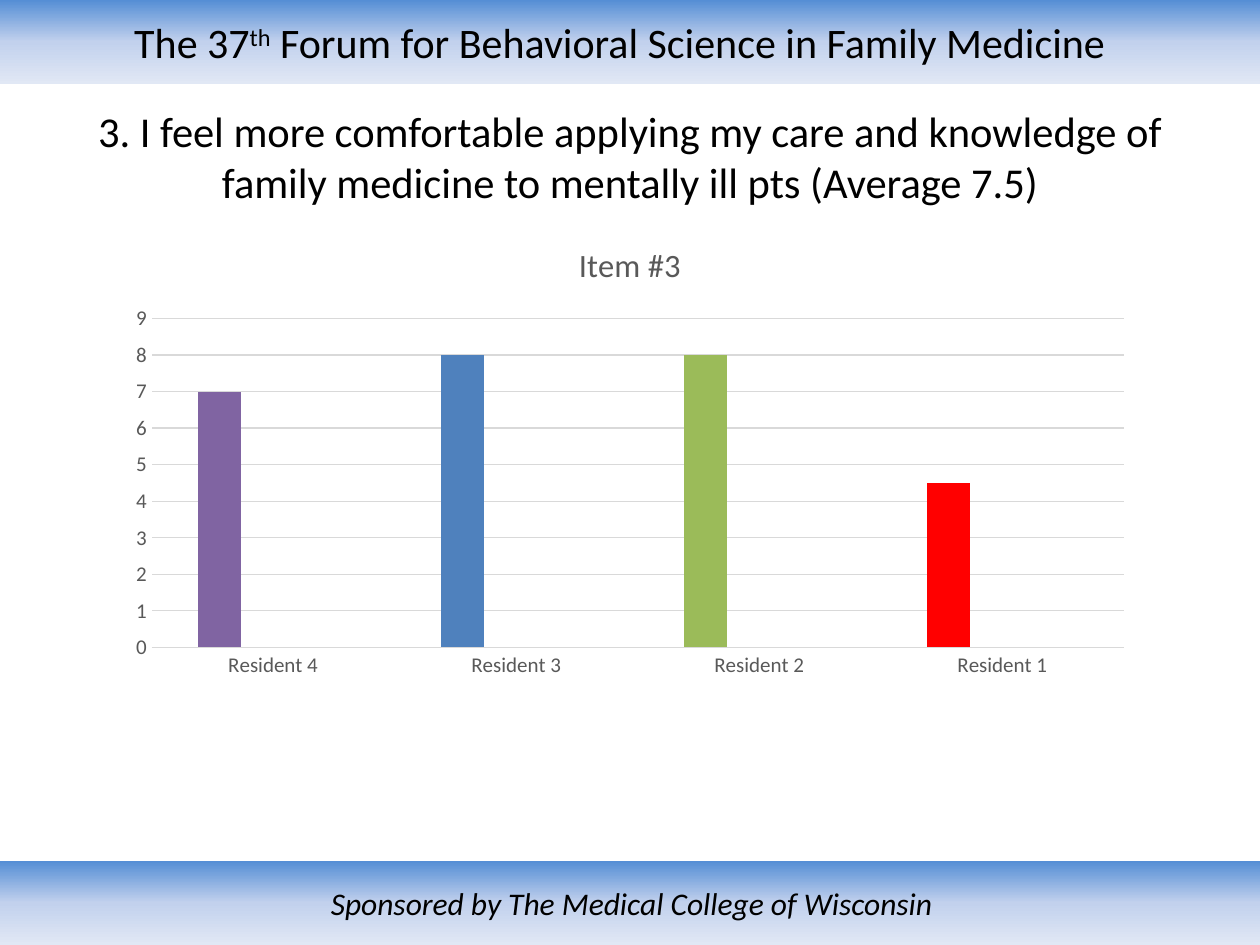
from copy import deepcopy

from pptx import Presentation
from pptx.chart.data import CategoryChartData
from pptx.dml.color import RGBColor
from pptx.enum.chart import XL_CHART_TYPE, XL_TICK_MARK
from pptx.enum.shapes import MSO_SHAPE
from pptx.enum.text import MSO_ANCHOR, PP_ALIGN
from pptx.util import Pt

COLUMNS = XL_CHART_TYPE.COLUMN_CLUSTERED
NO_TICK = XL_TICK_MARK.NONE
RECTANGLE = MSO_SHAPE.RECTANGLE
MIDDLE, TOP = MSO_ANCHOR.MIDDLE, MSO_ANCHOR.TOP
CENTER = PP_ALIGN.CENTER

FONT = "Calibri"
BLACK, GREY, GRID = "000000", "595959", "D9D9D9"
BAND_STOPS = [(0, "558ED5"), (0.5, "C2D1ED"), (1, "E1E8F5")]
RESIDENTS = ["Resident 4", "Resident 3", "Resident 2", "Resident 1"]
SCORES = [7, 8, 8, 4.5]
BAR_COLORS = ["8064A2", "4F81BD", "9BBB59", "FF0000"]


def color(hex_value):
    return RGBColor.from_string(hex_value)


def apply(target, **values):
    for name, value in values.items():
        setattr(target, name, value)


def style_font(font, size, hex_value=BLACK, **values):
    apply(font, name=FONT, size=Pt(size), **values)
    font.color.rgb = color(hex_value)


def write_text(shape, runs, size, italic=False, **frame_format):
    """Write (text, baseline) runs as one centred paragraph."""
    frame = shape.text_frame
    apply(frame, word_wrap=True, **frame_format)
    paragraph = frame.paragraphs[0]
    paragraph.alignment = CENTER
    for text, baseline in runs:
        run = paragraph.add_run()
        run.text = text
        style_font(run.font, size, italic=italic)
        if baseline:
            run.font._element.set("baseline", str(baseline * 1000))


def add_band(slide, box, runs, size, **text_format):
    shape = slide.shapes.add_shape(RECTANGLE, *map(Pt, box))
    shape.shadow.inherit = False
    shape.line.fill.background()
    # Three-stop gradient running downwards
    shape.fill.gradient()
    shape.fill.gradient_angle = 270
    stop_list = shape.element.xpath("./p:spPr/a:gradFill/a:gsLst")[0]
    stop_list.append(deepcopy(stop_list[-1]))
    for stop, (position, hex_value) in zip(shape.fill.gradient_stops, BAND_STOPS):
        stop.position = position
        stop.color.rgb = color(hex_value)
    write_text(shape, runs, size, vertical_anchor=MIDDLE, **text_format)


def add_question(slide, box, text):
    shape = slide.shapes.add_textbox(*map(Pt, box))
    write_text(shape, [(text, 0)], 24.3, vertical_anchor=TOP, margin_top=0)


def add_score_chart(slide, box, title):
    data = CategoryChartData()
    data.categories = RESIDENTS
    data.add_series("Series 1", SCORES)
    # Empty series keep their share of each cluster
    for name in ("Series 2", "Series 3"):
        data.add_series(name, [None] * len(RESIDENTS))
    chart = slide.shapes.add_chart(COLUMNS, *map(Pt, box), data).chart
    style_font(chart.font, 10)
    apply(chart, has_legend=False, has_title=True)

    # Title
    frame = chart.chart_title.text_frame
    frame.text = title
    style_font(frame.paragraphs[0].runs[0].font, 18.6, GREY, bold=False)

    # Bars
    plot = chart.plots[0]
    apply(plot, gap_width=219, overlap=-27, vary_by_categories=False)
    for series, hex_value in zip(plot.series, ("4F81BD", "C0504D", "9BBB59")):
        series.format.fill.solid()
        series.format.fill.fore_color.rgb = color(hex_value)
    for index, hex_value in enumerate(BAR_COLORS):
        fill = plot.series[0].points[index].format.fill
        fill.solid()
        fill.fore_color.rgb = color(hex_value)

    # Axes
    category_axis, value_axis = chart.category_axis, chart.value_axis
    for axis in (category_axis, value_axis):
        apply(axis, major_tick_mark=NO_TICK, minor_tick_mark=NO_TICK)
        style_font(axis.tick_labels.font, 12, GREY)
    apply(value_axis, minimum_scale=0, maximum_scale=9, major_unit=1,
          has_major_gridlines=True)
    value_axis.format.line.fill.background()
    for line in (category_axis.format.line, value_axis.major_gridlines.format.line):
        line.width = Pt(0.75)
        line.color.rgb = color(GRID)


def main():
    presentation = Presentation()
    apply(presentation, slide_width=Pt(720), slide_height=Pt(540))
    slide = presentation.slides.add_slide(presentation.slide_layouts[6])

    # Header and footer bands
    add_band(slide, (0, 0, 720, 48),
             [("The 37", 0), ("th", 30),
              (" Forum for Behavioral Science in Family Medicine", 0)],
             24, margin_right=Pt(18.6))
    add_band(slide, (0, 492, 722, 48),
             [("Sponsored by The Medical College of Wisconsin", 0)],
             18, italic=True)

    # Survey item and its scores
    add_question(slide, (36, 60, 648, 102),
                 "3. I feel more comfortable applying my care and knowledge of "
                 "family medicine to mentally ill pts (Average 7.5)")
    add_score_chart(slide, (66, 126, 588, 266.4), "Item #3")

    presentation.save("out.pptx")


if __name__ == "__main__":
    main()
